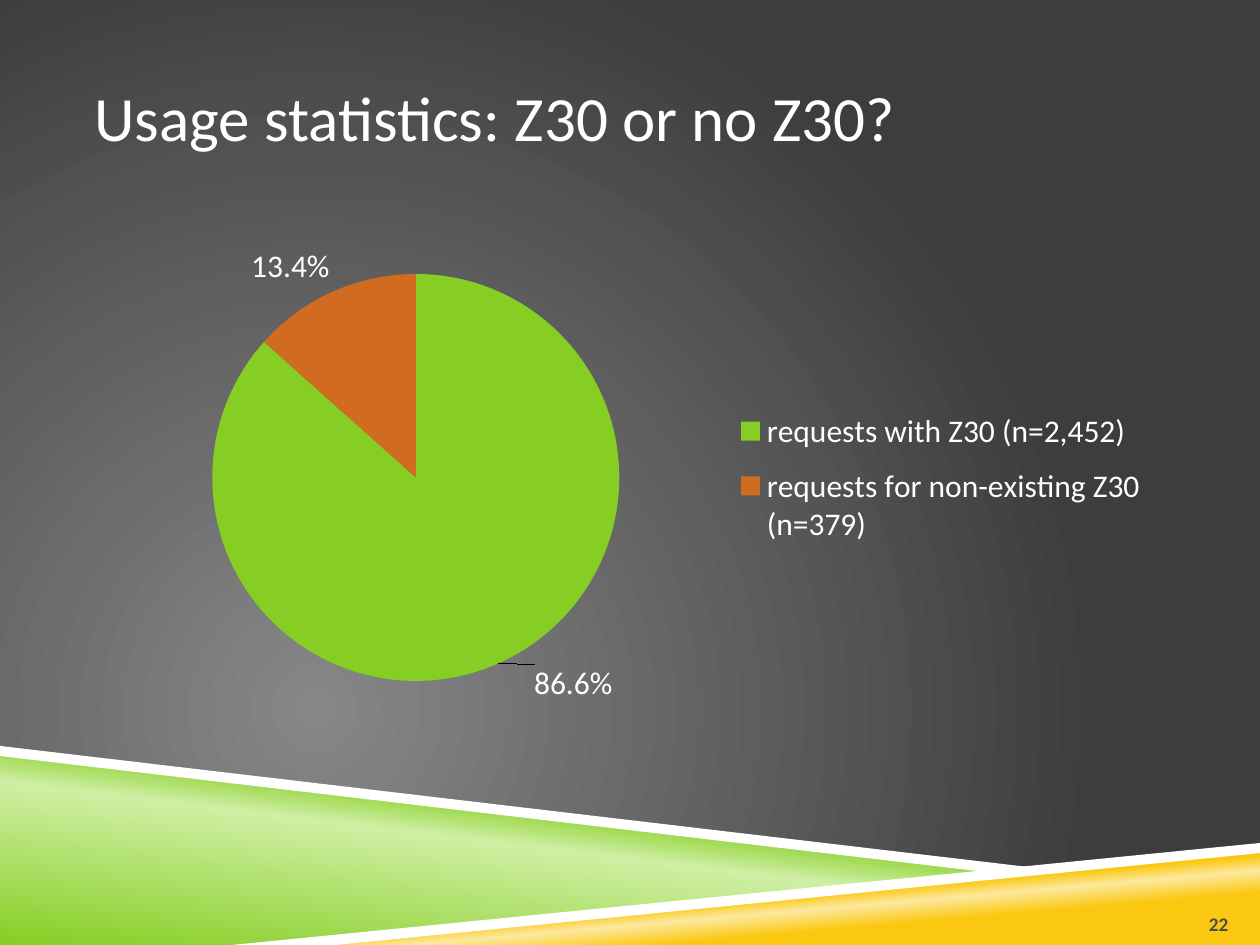
from lxml.etree import SubElement
from pptx import Presentation
from pptx.chart.data import CategoryChartData
from pptx.dml.color import RGBColor
from pptx.enum.chart import XL_CHART_TYPE, XL_LABEL_POSITION, XL_LEGEND_POSITION
from pptx.enum.text import MSO_ANCHOR, PP_ALIGN
from pptx.oxml.ns import qn
from pptx.util import Inches, Pt

FONT = "Calibri"
PERCENT_FORMAT = "0.0%"
WHITE = RGBColor(0xFF, 0xFF, 0xFF)
GRAY = RGBColor(0x4D, 0x4D, 0x4D)
BACKGROUND_LIGHT = RGBColor(0x87, 0x87, 0x87)
BACKGROUND_DARK = RGBColor(0x3D, 0x3D, 0x3D)
GREEN = RGBColor(0x86, 0xCE, 0x24)
PALE_GREEN = RGBColor(0xCF, 0xEF, 0xA4)
YELLOW = RGBColor(0xFA, 0xC8, 0x10)
PALE_YELLOW = RGBColor(0xFD, 0xE9, 0x9F)
ORANGE = RGBColor(0xD0, 0x6B, 0x20)


def set_gradient(fill, element, stops, angle=None, focus=None):
    fill.gradient()
    gradient = element.find(".//" + qn("a:gradFill"))
    for child in list(gradient):
        gradient.remove(child)
    stop_list = SubElement(gradient, qn("a:gsLst"))
    for position, color in stops:
        stop = SubElement(stop_list, qn("a:gs"), pos=str(position * 1000))
        SubElement(stop, qn("a:srgbClr"), val=str(color))
    if focus:
        circle = SubElement(gradient, qn("a:path"), path="circle")
        sides = {side: str(value * 1000) for side, value in zip("ltrb", focus)}
        SubElement(circle, qn("a:fillToRect"), **sides)
    else:
        SubElement(gradient, qn("a:lin"), ang=str(angle * 60000), scaled="0")


def add_text(slide, text, box, size, color, bold=False, align=PP_ALIGN.LEFT,
             anchor=MSO_ANCHOR.MIDDLE, bottom=0.05):
    shape = slide.shapes.add_textbox(*map(Inches, box))
    frame = shape.text_frame
    frame.word_wrap = True
    frame.vertical_anchor = anchor
    frame.margin_left = frame.margin_right = 0
    frame.margin_top, frame.margin_bottom = Inches(0.05), Inches(bottom)
    paragraph = frame.paragraphs[0]
    paragraph.text = text
    paragraph.alignment = align
    font = paragraph.font
    font.name, font.size, font.bold = FONT, Pt(size), bold
    font.color.rgb = color


def add_band(slide, points, color=None, stops=None, angle=None):
    corners = [(Inches(x), Inches(y)) for x, y in points]
    builder = slide.shapes.build_freeform(*corners[0])
    builder.add_line_segments(corners[1:], close=True)
    shape = builder.convert_to_shape()
    shape.shadow.inherit = False
    shape.line.fill.background()
    if stops:
        set_gradient(shape.fill, shape.element, stops, angle=angle)
    else:
        shape.fill.solid()
        shape.fill.fore_color.rgb = color


def add_footer_bands(slide, left, top, right, bottom):
    add_band(slide, [(left, top + 0.05), (7.92, 6.92), (2, bottom), (left, bottom)],
             stops=[(0, GREEN), (52, PALE_GREEN), (66, GREEN)], angle=277)
    add_band(slide, [(1.98, bottom), (right, 6.72), (right, bottom)],
             stops=[(28, YELLOW), (40, PALE_YELLOW), (48, YELLOW)], angle=265)
    add_band(slide, [(left, top), (left, top + 0.08), (7.9, 6.93), (8.32, 6.9)], WHITE)
    add_band(slide, [(right, 6.69), (1.84, bottom), (2.66, bottom), (right, 6.77)], WHITE)


def set_layout(parent, index, **settings):
    for old_layout in parent.findall(qn("c:layout")):
        parent.remove(old_layout)
    layout = SubElement(parent, qn("c:layout"))
    manual = SubElement(layout, qn("c:manualLayout"))
    for name, value in settings.items():
        SubElement(manual, qn("c:" + name), val=str(value))
    parent.insert(index, layout)


def shift_label(series, index, x, y):
    series.points[index].data_label.position = XL_LABEL_POSITION.OUTSIDE_END
    label = series.data_labels._element.find(qn("c:dLbl"))
    label.find(qn("c:showVal")).set("val", "0")
    label.find(qn("c:showPercent")).set("val", "1")
    set_layout(label, 1, x=x, y=y)
    number_format = SubElement(label, qn("c:numFmt"),
                               formatCode=PERCENT_FORMAT, sourceLinked="0")
    label.insert(2, number_format)


def add_usage_chart(slide, box):
    data = CategoryChartData()
    data.categories = ["requests with Z30 (n=2,452)",
                       "requests for non-existing Z30 (n=379)"]
    data.add_series("Series 1", (86.6, 13.4))
    chart = slide.shapes.add_chart(XL_CHART_TYPE.PIE, *map(Inches, box), data).chart
    chart.has_title = False
    chart.font.name, chart.font.size = FONT, Pt(18)
    chart.font.color.rgb = WHITE
    chart.has_legend = True
    legend = chart.legend
    legend.position = XL_LEGEND_POSITION.RIGHT
    legend.include_in_layout = False
    set_layout(legend._element, 1, xMode="edge", yMode="edge",
               x=0.59, y=0.34, w=0.4, h=0.32)
    plot = chart.plots[0]
    plot.vary_by_categories = True
    series = plot.series[0]
    for index, color in enumerate((GREEN, ORANGE)):
        fill = series.points[index].format.fill
        fill.solid()
        fill.fore_color.rgb = color
    labels = series.data_labels
    labels.show_percentage, labels.show_value = True, False
    labels.number_format, labels.number_format_is_linked = PERCENT_FORMAT, False
    labels.position = XL_LABEL_POSITION.OUTSIDE_END
    shift_label(series, 0, 0.03, -0.01)
    plot_area = chart._chartSpace.find(".//" + qn("c:plotArea"))
    set_layout(plot_area, 0, layoutTarget="inner", xMode="edge", yMode="edge",
               x=0.11, y=0.1, w=0.38, h=0.8)


def main():
    presentation = Presentation()
    presentation.slide_width, presentation.slide_height = Inches(10), Inches(7.5)
    slide = presentation.slides.add_slide(presentation.slide_layouts[6])
    set_gradient(slide.background.fill, slide.element,
                 [(0, BACKGROUND_LIGHT), (100, BACKGROUND_DARK)],
                 focus=(50, 100, 100, 50))
    add_footer_bands(slide, 0, 5.92, 10, 7.5)
    add_text(slide, "Usage statistics: Z30 or no Z30?", (0.75, 0.3, 8.5, 1.25), 36, WHITE)
    add_usage_chart(slide, (0.75, 1.75, 8.5, 4.08))
    add_text(slide, "22", (9.25, 7.02, 0.5, 0.4), 11, GRAY, bold=True,
             align=PP_ALIGN.RIGHT, anchor=MSO_ANCHOR.BOTTOM, bottom=0)
    presentation.save("out.pptx")


if __name__ == "__main__":
    main()
